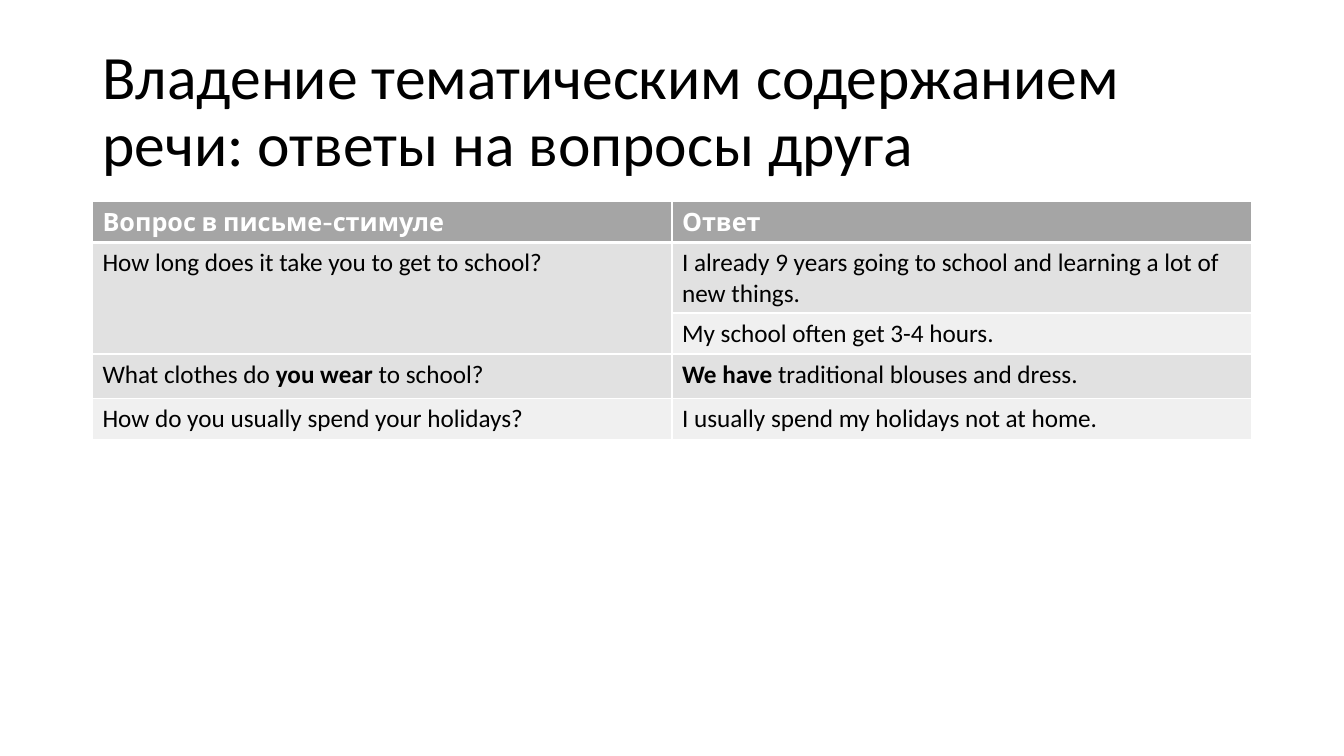
from lxml import etree
from pptx import Presentation
from pptx.dml.color import RGBColor
from pptx.enum.text import MSO_ANCHOR
from pptx.oxml.ns import qn
from pptx.util import Cm, Pt

MIDDLE = MSO_ANCHOR.MIDDLE
BLACK, WHITE = "000000", "FFFFFF"
HEADER_GREY, DARK_BAND, LIGHT_BAND = "A5A5A5", "E1E1E1", "F0F0F0"
LEFT, WIDTH = Cm(2.33), Cm(29.21)


def add_run(paragraph, text, size, color=BLACK, font="Calibri", bold=False):
    run = paragraph.add_run()
    run.text = text
    run.font.size = Pt(size)
    run.font.name = font
    run.font.bold = bold
    run.font.color.rgb = RGBColor.from_string(color)


def add_border(cell, side, width):
    """Draw a white line of the given point width on side L, R, T or B."""
    line = etree.SubElement(cell._tc.get_or_add_tcPr(), qn(f"a:ln{side}"), w=str(Pt(width)))
    fill = etree.SubElement(line, qn("a:solidFill"))
    etree.SubElement(fill, qn("a:srgbClr"), val=WHITE)


prs = Presentation()
prs.slide_width, prs.slide_height = Cm(33.87), Cm(19.05)
slide = prs.slides.add_slide(prs.slide_layouts[6])

title = slide.shapes.add_textbox(LEFT, Cm(1.01), WIDTH, Cm(3.68)).text_frame
title.word_wrap = True
title.vertical_anchor = MIDDLE
title.paragraphs[0].line_spacing = 0.9
add_run(title.paragraphs[0], "Владение тематическим содержанием речи: ответы на вопросы друга", 44)

# Each row: height in cm, fill, question runs, answer runs; a run is (text, bold).
rows = [
    (1.03, HEADER_GREY, [("Вопрос в письме-стимуле", True)], [("Ответ", True)]),
    (1.03, DARK_BAND, [("How long does it take you to get to school?", False)],
     [("I already 9 years going to school and learning a lot of new things.", False)]),
    (1.03, LIGHT_BAND, [], [("My school often get 3-4 hours.", False)]),
    (1.12, DARK_BAND, [("What clothes do ", False), ("you wear", True), (" to school?", False)],
     [("We have ", True), ("traditional blouses and dress.", False)]),
    (1.03, LIGHT_BAND, [("How do you usually spend your holidays?", False)],
     [("I usually spend my holidays not at home.", False)]),
]
total_height = Cm(sum(row[0] for row in rows))
answers = slide.shapes.add_table(len(rows), 2, LEFT, Cm(5.08), WIDTH, total_height).table

for r, (height, band, *row_texts) in enumerate(rows):
    answers.rows[r].height = Cm(height)
    color, font = (WHITE, "Cabin") if r == 0 else (BLACK, "Calibri")
    for c, runs in enumerate(row_texts):
        cell = answers.cell(r, c)
        for text, bold in runs:
            add_run(cell.text_frame.paragraphs[0], text, 18, color, font, bold)
        for side in "LRTB":
            under_header = (r, side) in [(0, "B"), (1, "T")]
            add_border(cell, side, 3 if under_header else 1)
        cell.fill.solid()
        cell.fill.fore_color.rgb = RGBColor.from_string(band)

answers.cell(1, 0).merge(answers.cell(2, 0))

prs.save("out.pptx")
